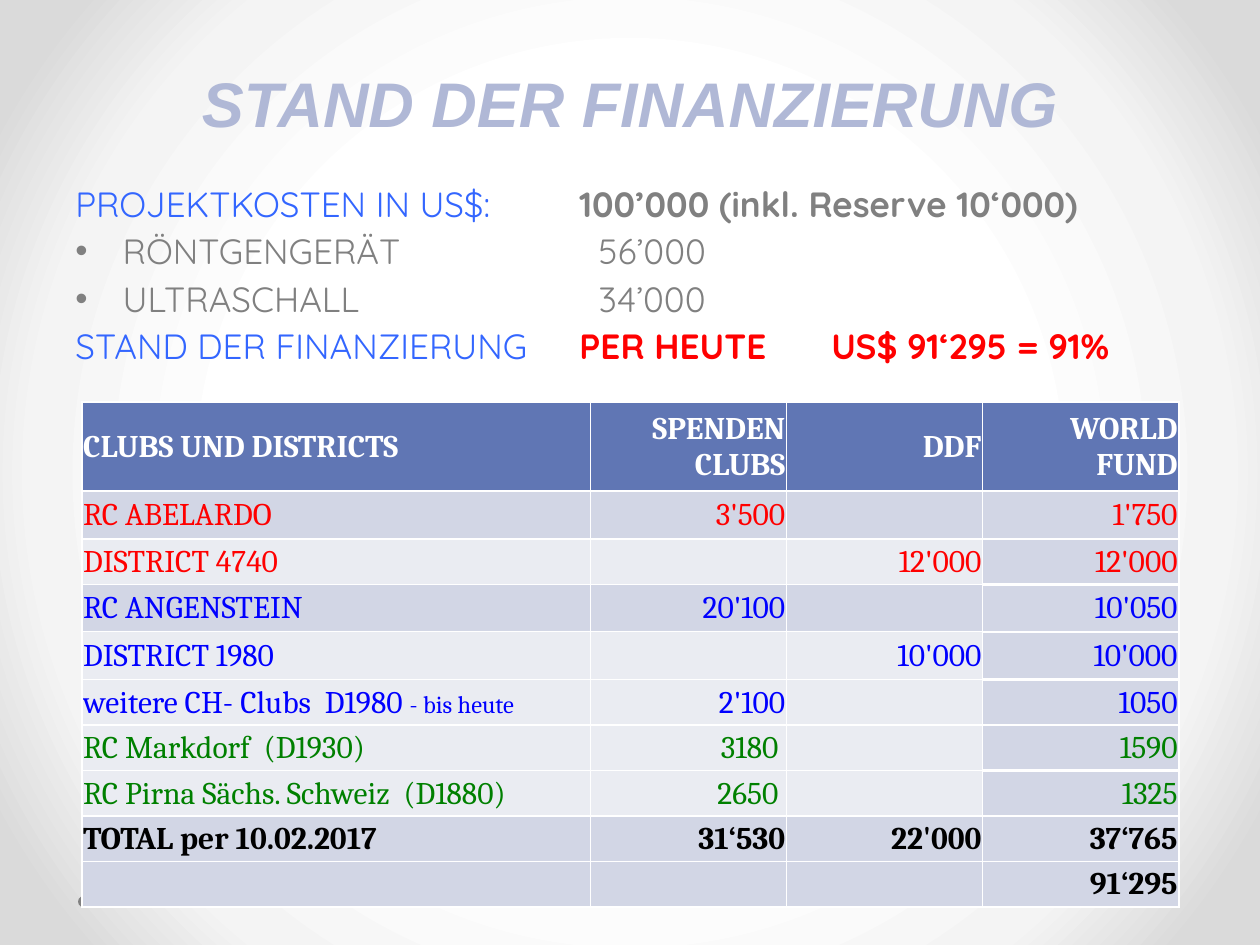
"""Build the slide on the state of project financing."""
from lxml.etree import SubElement
from pptx import Presentation
from pptx.dml.color import RGBColor
from pptx.enum.shapes import MSO_SHAPE
from pptx.enum.text import MSO_ANCHOR, PP_ALIGN
from pptx.oxml import parse_xml
from pptx.oxml.ns import nsdecls, qn
from pptx.util import Pt

WHITE = RGBColor(0xFF, 0xFF, 0xFF)
BLACK = RGBColor(0, 0, 0)
GREY = RGBColor(0x80, 0x80, 0x80)
LILAC = RGBColor(0xB0, 0xB8, 0xD6)
SKY = RGBColor(0x33, 0x66, 0xFF)
RED = RGBColor(0xFF, 0, 0)
BLUE = RGBColor(0, 0, 0xFF)
GREEN = RGBColor(0, 0x80, 0)
HEAD = RGBColor(0x60, 0x76, 0xB4)
DARK = RGBColor(0xD2, 0xD6, 0xE5)
LIGHT = RGBColor(0xEA, 0xEC, 0xF2)

TITLE = "STAND DER FINANZIERUNG"
GLOW = [(50, WHITE), (76, RGBColor(0xF4, 0xF4, 0xF4)), (92, RGBColor(0xDA, 0xDA, 0xDA))]
DOTS = [666, 44.6]
LINES = [
    (False, [("PROJEKTKOSTEN IN US$:\t", SKY, False),
             ("100’000 (inkl. Reserve 10‘000)", GREY, True)]),
    (True, [("RÖNTGENGERÄT\t56’000", GREY, False)]),
    (True, [("ULTRASCHALL\t34’000", GREY, False)]),
    (False, [("STAND DER FINANZIERUNG\t", SKY, False),
             ("PER HEUTE\tUS$ 91‘295 = 91%", RED, True)]),
]
ROWS = [
    (51, HEAD, WHITE, ["CLUBS UND DISTRICTS", "SPENDEN CLUBS", "DDF", "WORLD FUND"]),
    (27.3, DARK, RED, ["RC ABELARDO", "3'500", "", "1'750"]),
    (26, LIGHT, RED, ["DISTRICT 4740", "", "12'000", "12'000"]),
    (27, DARK, BLUE, ["RC ANGENSTEIN", "20'100", "", "10'050"]),
    (27.3, LIGHT, BLUE, ["DISTRICT 1980", "", "10'000", "10'000"]),
    (26, LIGHT, BLUE, ["weitere CH- Clubs  D1980 ", "2'100", "", "1050"]),
    (26, LIGHT, GREEN, ["RC Markdorf  (D1930)", "3180 ", "", "1590"]),
    (26, LIGHT, GREEN, ["RC Pirna Sächs. Schweiz  (D1880)", "2650 ", "", "1325"]),
    (26, DARK, BLACK, ["TOTAL per 10.02.2017", "31‘530", "22'000", "37‘765"]),
    (26, DARK, BLACK, ["", "", "", "91‘295"]),
]
NOTE_ROW, NOTE = 5, "- bis heute"
COLS = [290.6, 112.1, 112.1, 112.1]
TOTAL_ROW = 8


def style(run, font, size, color, bold=False):
    run.font.name = font
    run.font.size = Pt(size)
    run.font.color.rgb = color
    run.font.bold = bold


def add_glow(slide):
    slide.background.fill.solid()
    back = slide.element.find(".//" + qn("p:bgPr"))
    stops = "".join(f'<a:gs pos="{pos * 1000}"><a:srgbClr val="{color}"/></a:gs>'
                    for pos, color in GLOW)
    grad = parse_xml(
        f'<a:gradFill {nsdecls("a")} rotWithShape="1"><a:gsLst>{stops}</a:gsLst>'
        '<a:path path="circle"><a:fillToRect l="50000" t="50000" r="50000" b="50000"/>'
        '</a:path></a:gradFill>')
    back.replace(back.find(qn("a:solidFill")), grad)


def add_dots(slide):
    for left in DOTS:
        dot = slide.shapes.add_shape(MSO_SHAPE.OVAL, Pt(left), Pt(512), Pt(6.5), Pt(6.5))
        dot.shadow.inherit = False
        dot.fill.solid()
        dot.fill.fore_color.rgb = GREY
        dot.line.fill.background()


def add_box(slide, top, height):
    frame = slide.shapes.add_textbox(Pt(36), Pt(top), Pt(648), Pt(height)).text_frame
    frame.word_wrap = True
    return frame


def add_title(slide):
    frame = add_box(slide, 27.4, 56)
    frame.vertical_anchor = MSO_ANCHOR.BOTTOM
    frame.text = TITLE
    para = frame.paragraphs[0]
    para.alignment = PP_ALIGN.CENTER
    style(para.runs[0], "Arial", 36, LILAC, True)
    para.runs[0].font.italic = True


def set_tabs(para, bullet):
    props = para._p.get_or_add_pPr()
    if bullet:
        props.set("marL", str(Pt(27)))
        props.set("indent", str(Pt(-27)))
        SubElement(props, qn("a:buFont"), typeface="Arial")
        SubElement(props, qn("a:buChar"), char="•")
    tabs = SubElement(props, qn("a:tabLst"))
    for stop in [299] if bullet else [288, 432]:
        SubElement(tabs, qn("a:tab"), pos=str(Pt(stop)), algn="l")


def add_body(slide):
    frame = add_box(slide, 100.8, 378)
    for num, (bullet, parts) in enumerate(LINES):
        para = frame.add_paragraph() if num else frame.paragraphs[0]
        para.space_after = Pt(3)
        set_tabs(para, bullet)
        for text, color, bold in parts:
            run = para.add_run()
            run.text = text
            style(run, "Quicksand", 20, color, bold)


def set_edges(cell, top, bottom):
    props = cell._tc.get_or_add_tcPr()
    for tag, width in [("lnL", 1), ("lnR", 1), ("lnT", top), ("lnB", bottom)]:
        edge = SubElement(props, qn(f"a:{tag}"), w=str(Pt(width)))
        fill = SubElement(edge, qn("a:solidFill"))
        SubElement(fill, qn("a:srgbClr"), val=str(WHITE))


def fill_cell(cell, text, fill, color, bold, right):
    cell.margin_left = cell.margin_right = cell.margin_top = Pt(0.75)
    cell.margin_bottom = Pt(0)
    cell.vertical_anchor = MSO_ANCHOR.MIDDLE
    cell.fill.solid()
    cell.fill.fore_color.rgb = fill
    cell.text_frame.text = text
    para = cell.text_frame.paragraphs[0]
    para.alignment = PP_ALIGN.RIGHT if right else PP_ALIGN.LEFT
    for run in para.runs:
        style(run, "Cambria", 18, color, bold)


def add_grid(slide):
    high = sum(row[0] for row in ROWS)
    grid = slide.shapes.add_table(len(ROWS), len(COLS), Pt(46.8), Pt(229.7),
                                  Pt(sum(COLS)), Pt(high)).table
    for col, width in enumerate(COLS):
        grid.columns[col].width = Pt(width)
    last = len(COLS) - 1
    for row, (height, fill, color, texts) in enumerate(ROWS):
        grid.rows[row].height = Pt(height)
        bold = row == 0 or row >= TOTAL_ROW
        for col, text in enumerate(texts):
            cell = grid.cell(row, col)
            thick = range(TOTAL_ROW - 1) if col == last else range(1)
            top, bottom = [1.5 if edge in thick else 1 for edge in (row - 1, row)]
            set_edges(cell, top, bottom)
            shade = DARK if col == last and row else fill
            fill_cell(cell, text, shade, color, bold, col > 0)
    note = grid.cell(NOTE_ROW, 0).text_frame.paragraphs[0].add_run()
    note.text = NOTE
    style(note, "Cambria", 14, BLUE)


def main():
    deck = Presentation()
    deck.slide_width, deck.slide_height = Pt(720), Pt(540)
    slide = deck.slides.add_slide(deck.slide_layouts[6])
    add_glow(slide)
    add_dots(slide)
    add_title(slide)
    add_body(slide)
    add_grid(slide)
    deck.save("out.pptx")


if __name__ == "__main__":
    main()
